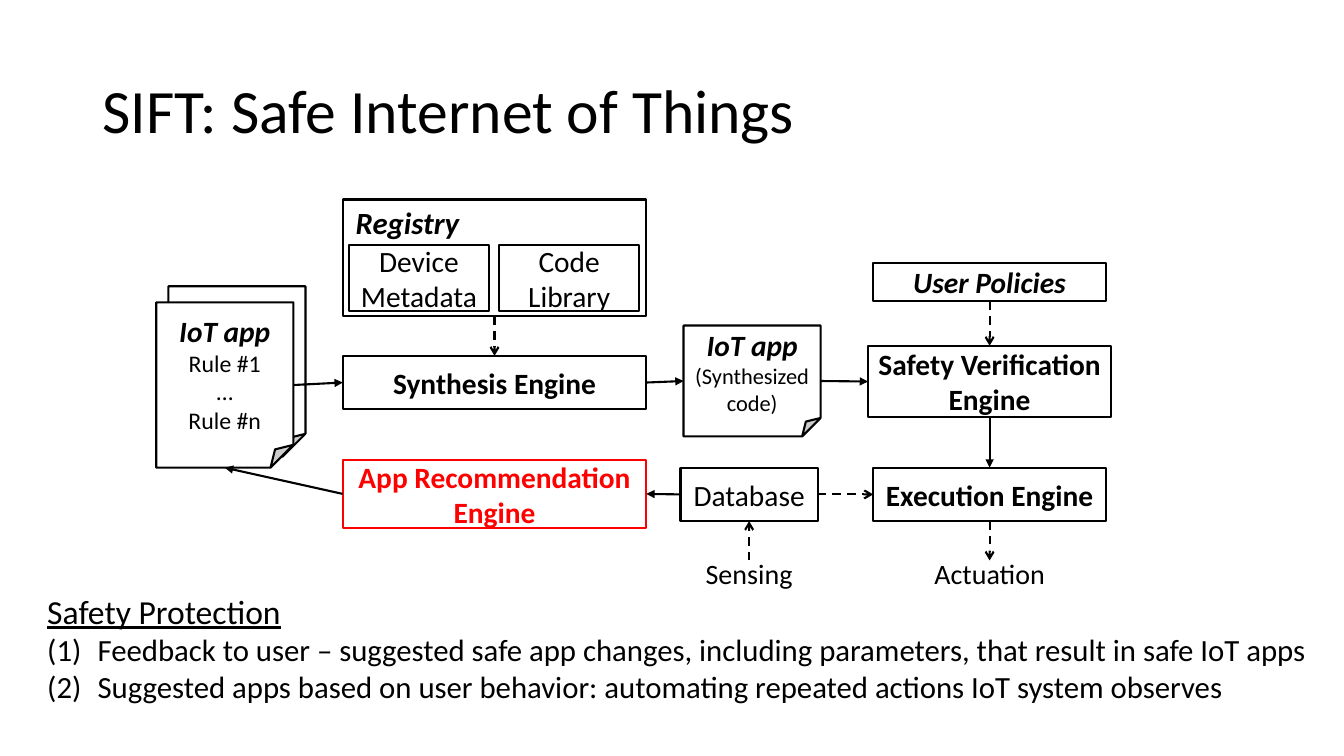
from lxml.etree import SubElement
from pptx import Presentation
from pptx.dml.color import RGBColor
from pptx.enum.dml import MSO_LINE
from pptx.enum.shapes import MSO_CONNECTOR, MSO_SHAPE
from pptx.enum.text import MSO_ANCHOR, MSO_AUTO_SIZE, PP_ALIGN
from pptx.oxml.ns import qn
from pptx.util import Inches, Pt

BLACK = RGBColor(0x00, 0x00, 0x00)
WHITE = RGBColor(0xFF, 0xFF, 0xFF)
RED = RGBColor(0xFF, 0x00, 0x00)
FONT = "Calibri"
TOP, LEFT, BOTTOM, RIGHT = range(4)  # connection sites
PAPER = MSO_SHAPE.FOLDED_CORNER


def add_text(frame, text, size=21, color=BLACK, bold=False, italic=False,
             underline=False, align=PP_ALIGN.LEFT):
    """Write one paragraph, filling the frame's first one if it is empty."""
    paragraph = frame.paragraphs[0]
    if paragraph.runs:
        paragraph = frame.add_paragraph()
    paragraph.alignment = align
    run = paragraph.add_run()
    run.text = text
    font = run.font
    font.name, font.size = FONT, Pt(size)
    font.bold, font.italic, font.underline = bold, italic, underline
    font.color.rgb = color
    return paragraph


def add_box(shapes, left, top, width, height, text="", kind=MSO_SHAPE.RECTANGLE,
            outline=BLACK, align=PP_ALIGN.CENTER, **text_format):
    shape = shapes.add_shape(kind, Inches(left), Inches(top), Inches(width), Inches(height))
    shape.shadow.inherit = False
    shape.fill.solid()
    shape.fill.fore_color.rgb = WHITE
    if outline is None:
        shape.line.fill.background()
    else:
        shape.line.color.rgb = outline
        shape.line.width = Pt(1.5)
    shape.text_frame.word_wrap = True
    shape.text_frame.vertical_anchor = MSO_ANCHOR.MIDDLE
    if text:
        add_text(shape.text_frame, text, align=align, **text_format)
    return shape


def add_arrow(slide, start, start_site, end, end_site, dashed=False):
    """Control flow is solid with a filled head, data flow dashed with an open one."""
    connector = slide.shapes.add_connector(MSO_CONNECTOR.STRAIGHT, 0, 0, 0, 0)
    connector.begin_connect(start, start_site)
    connector.end_connect(end, end_site)
    connector.line.color.rgb = BLACK
    connector.line.width = Pt(1.5)
    if dashed:
        connector.line.dash_style = MSO_LINE.DASH
    properties = connector.element.spPr
    SubElement(properties.find(qn("a:ln")), qn("a:tailEnd"),
               type="arrow" if dashed else "triangle")
    SubElement(properties, qn("a:effectLst"))


def add_title(slide, left, top, width, height):
    title = slide.shapes.add_textbox(Inches(left), Inches(top), Inches(width), Inches(height))
    title.text_frame.word_wrap = True
    title.text_frame.vertical_anchor = MSO_ANCHOR.MIDDLE
    add_text(title.text_frame, "SIFT: Safe Internet of Things", size=44).line_spacing = 0.9


def add_app_stack(slide, left, top, width, height):
    page_width = width - 0.12
    add_box(slide.shapes, left + 0.12, top, page_width, height - 0.11, kind=PAPER)
    front = add_box(slide.shapes, left, top + 0.16, page_width, height - 0.16, "IoT app",
                    kind=PAPER, bold=True, italic=True)
    for rule in ("Rule #1", "…", "Rule #n"):
        add_text(front.text_frame, rule, size=17, align=PP_ALIGN.CENTER)
    return front


def add_registry(slide, left, top, width, height):
    group = slide.shapes.add_group_shape()
    registry = add_box(group.shapes, left, top, width, height)
    add_box(group.shapes, left + 0.03, top + 0.03, 1.3, 0.39, "Registry", outline=None,
            align=PP_ALIGN.LEFT, size=22, bold=True, italic=True)
    for column, part in enumerate(("Device Metadata", "Code Library")):
        add_box(group.shapes, left + 0.06 + 1.49 * column, top + 0.45, 1.39, 0.66, part)
    return registry


def add_synthesis(slide, left, top, width, height):
    """Registry, synthesis engine and recommendation engine, one below the other."""
    registry = add_registry(slide, left, top, width, 1.16)
    synthesis = add_box(slide.shapes, left, top + 1.55, width, 0.53,
                        "Synthesis Engine", bold=True)
    recommendation = add_box(slide.shapes, left, top + height - 0.68, width, 0.68,
                             "App Recommendation Engine", outline=RED, color=RED, bold=True)
    add_arrow(slide, registry, BOTTOM, synthesis, TOP, dashed=True)
    return synthesis, recommendation


def add_data(slide, left, top, width, height):
    """Synthesized app, database and sensing."""
    app = add_box(slide.shapes, left + 0.03, top, width - 0.03, 1.1, "IoT app",
                  kind=PAPER, bold=True, italic=True)
    add_text(app.text_frame, "(Synthesized code)", size=16, align=PP_ALIGN.CENTER)
    database = add_box(slide.shapes, left, top + 1.41, width - 0.03, 0.53, "Database")
    sensing = add_box(slide.shapes, left, top + height - 0.26, width - 0.03, 0.26,
                      "Sensing", outline=None, size=20)
    add_arrow(slide, sensing, TOP, database, BOTTOM, dashed=True)
    return app, database


def add_execution(slide, left, top, width, height):
    """Policies, verification, execution and actuation on one centre line."""
    center = left + width / 2

    def add_step(offset, step_width, step_height, text, **options):
        return add_box(slide.shapes, center - step_width / 2, top + offset,
                       step_width, step_height, text, **options)

    policies = add_step(0, 2.31, 0.38, "User Policies", bold=True, italic=True)
    verification = add_step(0.82, width, 0.71, "Safety Verification Engine", bold=True)
    execution = add_step(2.03, 2.31, 0.53, "Execution Engine", bold=True)
    actuation = add_step(height - 0.26, 1.32, 0.26, "Actuation", outline=None, size=20)
    add_arrow(slide, policies, BOTTOM, verification, TOP, dashed=True)
    add_arrow(slide, verification, BOTTOM, execution, TOP)
    add_arrow(slide, execution, BOTTOM, actuation, TOP, dashed=True)
    return verification, execution


def add_diagram(slide, left, top):
    app_stack = add_app_stack(slide, left, top + 0.86, 1.48, 1.8)
    synthesis, recommendation = add_synthesis(slide, left + 1.85, top, 3.01, 3.26)
    app, database = add_data(slide, left + 5.2, top + 1.25, 1.39, 2.59)
    verification, execution = add_execution(slide, left + 7.06, top + 0.63, 2.41, 3.21)
    # Arrows between the columns
    add_arrow(slide, app_stack, RIGHT, synthesis, LEFT)
    add_arrow(slide, synthesis, RIGHT, app, LEFT)
    add_arrow(slide, app, RIGHT, verification, LEFT)
    add_arrow(slide, database, RIGHT, execution, LEFT, dashed=True)
    add_arrow(slide, database, LEFT, recommendation, RIGHT)
    add_arrow(slide, recommendation, LEFT, app_stack, BOTTOM)


def add_protection(slide, left, top, width, height):
    box = slide.shapes.add_textbox(Inches(left), Inches(top), Inches(width), Inches(height))
    frame = box.text_frame
    frame.word_wrap = False
    frame.auto_size = MSO_AUTO_SIZE.SHAPE_TO_FIT_TEXT
    add_text(frame, "Safety Protection", size=24, underline=True)
    for item in (
        "Feedback to user – suggested safe app changes, including parameters, "
        "that result in safe IoT apps",
        "Suggested apps based on user behavior: automating repeated actions "
        "IoT system observes",
    ):
        # Numbered (1), (2) with a hanging indent
        properties = add_text(frame, item, size=22)._p.get_or_add_pPr()
        properties.set("marL", str(Inches(0.5)))
        properties.set("indent", str(-Inches(0.5)))
        SubElement(properties, qn("a:buFont"), typeface="+mj-lt")
        SubElement(properties, qn("a:buAutoNum"), type="arabicParenBoth")


def main():
    presentation = Presentation()
    presentation.slide_width, presentation.slide_height = Inches(13.33), Inches(7.5)
    slide = presentation.slides.add_slide(presentation.slide_layouts[6])
    add_title(slide, 0.92, 0.4, 11.5, 1.45)
    add_diagram(slide, 1.55, 1.98)
    add_protection(slide, 0.37, 5.81, 12.82, 1.25)
    presentation.save("out.pptx")


if __name__ == "__main__":
    main()
